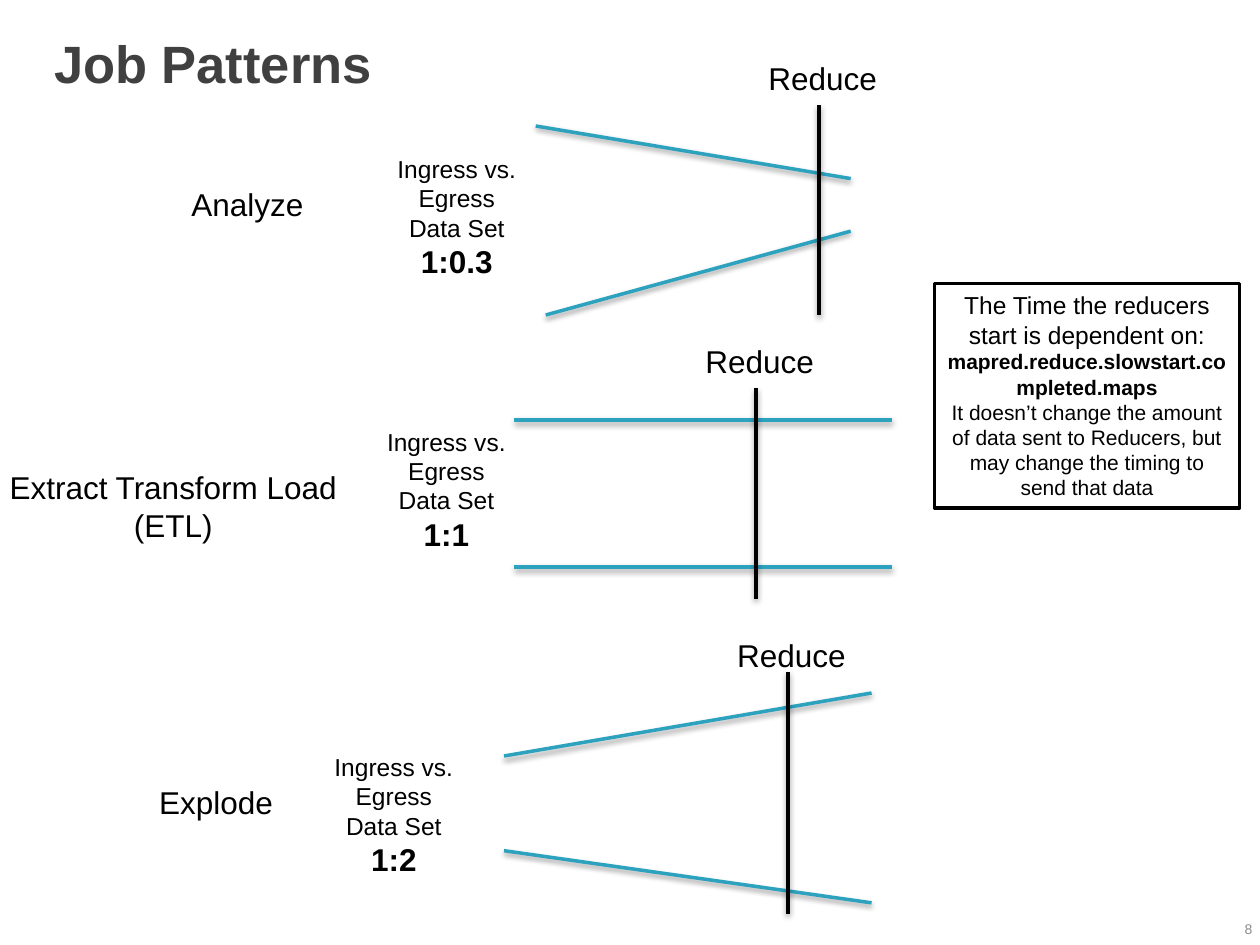
"""Build the Job Patterns slide comparing ingress and egress data sizes."""
from dataclasses import dataclass

from lxml import etree
from pptx import Presentation
from pptx import util as u
from pptx.dml.color import RGBColor
from pptx.enum import shapes, text
from pptx.oxml.ns import qn

BLACK = RGBColor(0x00, 0x00, 0x00)
WHITE = RGBColor(0xFF, 0xFF, 0xFF)
TEAL = RGBColor(0x2D, 0xA2, 0xBF)
TITLE_GREY = RGBColor(0x40, 0x40, 0x40)
NUMBER_GREY = RGBColor(0x8C, 0x8C, 0x8C)
LEFT, CENTER, RIGHT = text.PP_ALIGN.LEFT, text.PP_ALIGN.CENTER, text.PP_ALIGN.RIGHT
GROW = text.MSO_AUTO_SIZE.SHAPE_TO_FIT_TEXT


@dataclass(frozen=True)
class Span:
    words: str
    size: float = 18
    bold: bool = False
    color: RGBColor = BLACK


@dataclass(frozen=True)
class Line:
    x1: float
    y1: float
    x2: float
    y2: float


@dataclass(frozen=True)
class Pattern:
    label: tuple[str, ...]
    label_box: tuple[float, float, float, float]
    label_align: text.PP_ALIGN
    ratio: str
    ratio_at: tuple[float, float]
    flows: tuple[Line, Line]
    reduce_bar: Line
    reduce_top: float


PATTERNS = (
    Pattern(("Analyze",), (3.61, 3.61, 3.38, 1.02), LEFT, "1:0.3", (7.62, 2.97),
            (Line(10.8, 2.54, 17.15, 3.6), Line(11, 6.35, 17.15, 4.66)),
            Line(16.51, 2.12, 16.51, 6.35), 1.06),
    Pattern(("Extract Transform Load", "(ETL)"), (-1.27, 9.31, 9.53, 1.8), CENTER,
            "1:1", (7.41, 8.47),
            (Line(10.37, 8.47, 17.99, 8.47), Line(10.37, 11.43, 17.99, 11.43)),
            Line(15.24, 7.83, 15.24, 12.07), 6.77),
    Pattern(("Explode",), (2.96, 15.66, 7.2, 1.02), LEFT, "1:2", (6.35, 15.03),
            (Line(10.16, 15.24, 17.57, 13.97), Line(10.16, 17.15, 17.57, 18.2)),
            Line(15.88, 13.55, 15.88, 18.42), 12.7),
)


def fill_text(shape, *spans: Span, align=LEFT, anchor=text.MSO_ANCHOR.TOP,
              grow=True, spacing=1.0, margins=(0.25, 0.13)) -> None:
    """Write one paragraph per span into a shape."""
    frame = shape.text_frame
    frame.word_wrap = True
    frame.auto_size = GROW if grow else text.MSO_AUTO_SIZE.NONE
    frame.vertical_anchor = anchor
    frame.margin_left = frame.margin_right = u.Cm(margins[0])
    frame.margin_top = frame.margin_bottom = u.Cm(margins[1])
    for index, span in enumerate(spans):
        para = frame.add_paragraph() if index else frame.paragraphs[0]
        para.alignment = align
        para.line_spacing = spacing
        run = para.add_run()
        run.text = span.words
        run.font.name = "Arial"
        run.font.size = u.Pt(span.size)
        run.font.bold = span.bold
        run.font.color.rgb = span.color


def add_text(page, area: tuple[float, float, float, float], *spans: Span, **layout) -> None:
    """Add a text box at an area given in centimetres."""
    box = page.shapes.add_textbox(*map(u.Cm, area))
    fill_text(box, *spans, **layout)


def add_line(page, line: Line, color: RGBColor) -> None:
    """Add a straight line with a soft shadow below it."""
    ends = map(u.Cm, (line.x1, line.y1, line.x2, line.y2))
    connector = page.shapes.add_connector(shapes.MSO_CONNECTOR.STRAIGHT, *ends)
    connector.line.color.rgb = color
    connector.line.width = u.Pt(2)
    effects = etree.SubElement(connector._element.spPr, qn("a:effectLst"))
    shadow = etree.SubElement(effects, qn("a:outerShdw"), blurRad="40000",
                              dist="20000", dir="5400000", rotWithShape="0")
    shade = etree.SubElement(shadow, qn("a:srgbClr"), val=str(BLACK))
    etree.SubElement(shade, qn("a:alpha"), val="38000")


def add_pattern(page, pattern: Pattern) -> None:
    """Draw one job pattern with its label, flows, reduce bar and ratio."""
    add_text(page, pattern.label_box, *map(Span, pattern.label), align=pattern.label_align)
    for flow in pattern.flows:
        add_line(page, flow, TEAL)
    add_line(page, pattern.reduce_bar, BLACK)
    add_text(page, (pattern.reduce_bar.x1 - 1.27, pattern.reduce_top, 2.75, 1.02),
             Span("Reduce"))
    add_text(page, (*pattern.ratio_at, 3.18, 2.82),
             Span("Ingress vs. Egress Data Set", 14),
             Span(pattern.ratio, bold=True), align=CENTER)


def add_note(page) -> None:
    """Draw the framed note about when reducers start."""
    box = page.shapes.add_shape(shapes.MSO_SHAPE.RECTANGLE,
                                *map(u.Cm, (18.84, 5.72, 6.15, 4.52)))
    box.shadow.inherit = False
    box.fill.solid()
    box.fill.fore_color.rgb = WHITE
    box.line.color.rgb = BLACK
    box.line.width = u.Pt(2)
    fill_text(box, Span("The Time the reducers start is dependent on:", 14),
              Span("mapred.reduce.slowstart.completed.maps", 12, True),
              Span("It doesn’t change the amount of data sent to Reducers, "
                   "but may change the timing to send that data", 12), align=CENTER)


def main() -> None:
    """Create and save the deck."""
    deck = Presentation()
    deck.slide_width, deck.slide_height = u.Cm(25.4), u.Cm(19.05)
    page = deck.slides.add_slide(deck.slide_layouts[6])
    add_text(page, (0.84, 0.2, 21.67, 1.85), Span("Job Patterns", 30, True, TITLE_GREY),
             anchor=text.MSO_ANCHOR.BOTTOM, grow=False, spacing=0.9)
    add_text(page, (24.61, 18.21, 0.79, 1.02), Span("8", 8, color=NUMBER_GREY),
             align=RIGHT, anchor=text.MSO_ANCHOR.MIDDLE, grow=False, margins=(0.15, 0.08))
    for pattern in PATTERNS:
        add_pattern(page, pattern)
    add_note(page)
    deck.save("out.pptx")


if __name__ == "__main__":
    main()
